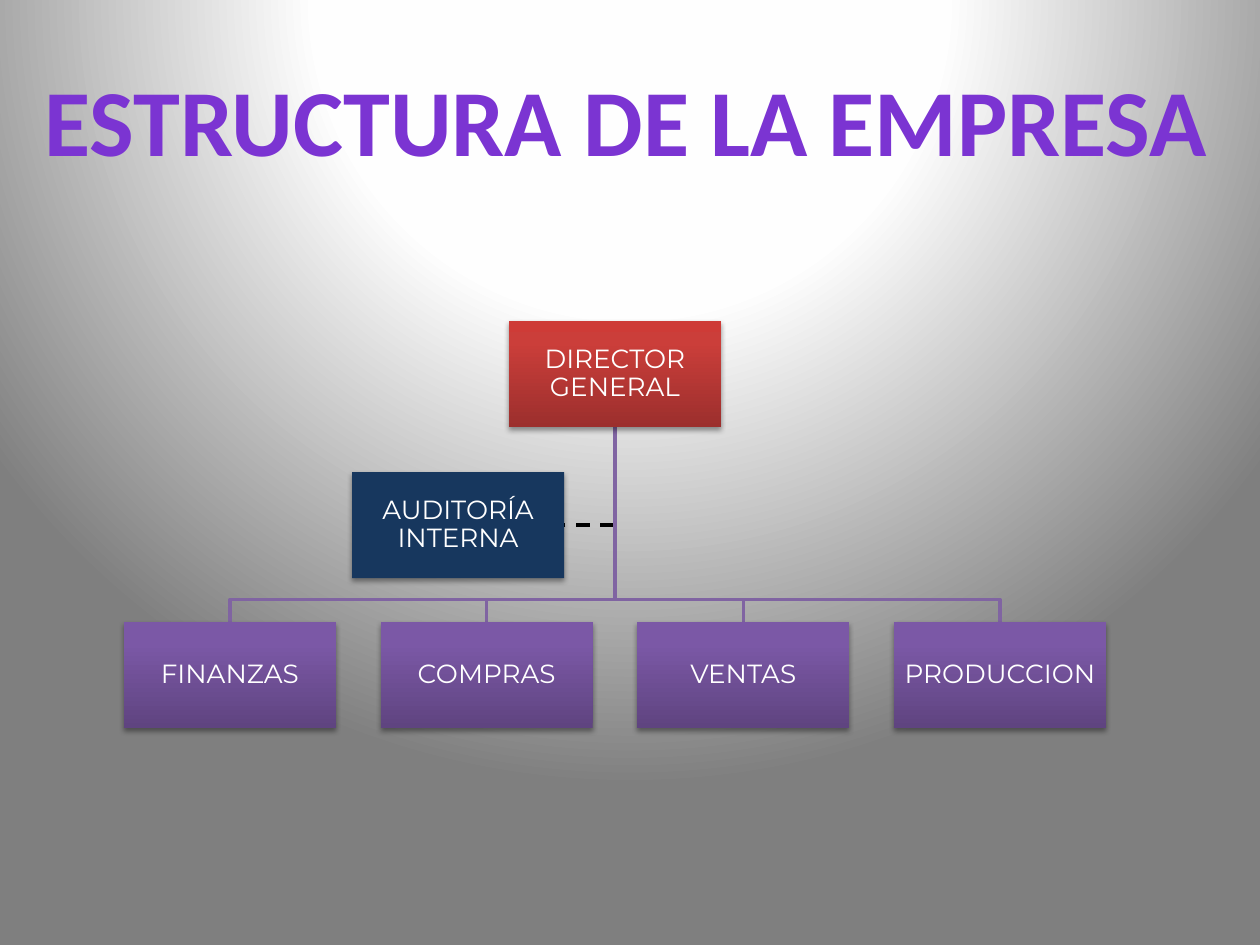
from lxml.etree import SubElement
from pptx import Presentation
from pptx.dml.color import RGBColor
from pptx.enum.dml import MSO_LINE
from pptx.enum.shapes import MSO_SHAPE
from pptx.enum.text import MSO_ANCHOR, MSO_AUTO_SIZE, PP_ALIGN
from pptx.oxml.ns import qn
from pptx.util import Pt

WHITE = RGBColor(0xFF, 0xFF, 0xFF)
BLACK = RGBColor(0, 0, 0)
NAVY = RGBColor(0x17, 0x37, 0x5E)
PURPLE_LINE = RGBColor(0x80, 0x64, 0xA2)
TITLE_PURPLE = RGBColor(0x7B, 0x34, 0xD2)
RED_STOPS = [
    (0, RGBColor(0x9C, 0x2F, 0x2D)),
    (80, RGBColor(0xCB, 0x3E, 0x3A)),
    (100, RGBColor(0xCE, 0x3B, 0x37)),
]
PURPLE_STOPS = [
    (0, RGBColor(0x5F, 0x44, 0x80)),
    (80, RGBColor(0x7B, 0x58, 0xA6)),
    (100, RGBColor(0x7C, 0x57, 0xA8)),
]
BACKGROUND_STOPS = [
    (0, WHITE),
    (40, RGBColor(0xFE, 0xFE, 0xFE)),
    (100, RGBColor(0x7F, 0x7F, 0x7F)),
]
DEPARTMENTS = ["FINANZAS", "COMPRAS", "VENTAS", "PRODUCCION"]
BOX_W, BOX_H = 121.2, 60.6


def add(parent, tag, **attrs):
    """Append a child element with the given attributes."""
    return SubElement(parent, qn(tag), {k: str(v) for k, v in attrs.items()})


def set_gradient(fill, element, stops):
    """Give a fill the listed stops and return its emptied gradient element."""
    fill.gradient()
    grad = element.find(".//" + qn("a:gradFill"))
    for child in list(grad):
        grad.remove(child)
    stop_list = add(grad, "a:gsLst")
    for position, color in stops:
        stop = add(stop_list, "a:gs", pos=position * 1000)
        add(stop, "a:srgbClr", val=color)
    return grad


def set_background(slide):
    """Light the slide from above with a circular gradient."""
    grad = set_gradient(slide.background.fill, slide.element, BACKGROUND_STOPS)
    path = add(grad, "a:path", path="circle")
    add(path, "a:fillToRect", l=50000, t=-80000, r=50000, b=180000)


def add_title(slide, left, top, width, height):
    """Place and format the title placeholder."""
    title = slide.shapes.title
    title.left, title.top, title.width, title.height = map(Pt, (left, top, width, height))
    tf = title.text_frame
    tf.text = "ESTRUCTURA DE LA EMPRESA"
    tf.word_wrap = False
    tf.auto_size = MSO_AUTO_SIZE.NONE
    tf.vertical_anchor = MSO_ANCHOR.TOP
    p = tf.paragraphs[0]
    p.alignment = PP_ALIGN.CENTER
    p.font.name, p.font.size, p.font.bold = "Calibri", Pt(54), True
    p.font.color.rgb = TITLE_PURPLE


def add_link(slide, points, color, dash=None):
    """Draw an open elbow line through the points."""
    start, *rest = [(Pt(x), Pt(y)) for x, y in points]
    builder = slide.shapes.build_freeform(*start)
    builder.add_line_segments(rest, close=False)
    sp = builder.convert_to_shape()
    sp.fill.background()
    sp.line.color.rgb = color
    sp.line.width = Pt(2)
    if dash:
        sp.line.dash_style = dash
    sp.shadow.inherit = False


def add_box(slide, left, top, text, color=None, stops=None):
    """Add one labelled box with a soft shadow."""
    sp = slide.shapes.add_shape(
        MSO_SHAPE.RECTANGLE, Pt(left), Pt(top), Pt(BOX_W), Pt(BOX_H))
    if stops:
        grad = set_gradient(sp.fill, sp.element, stops)
        add(grad, "a:lin", ang=270 * 60000, scaled=0)
    else:
        sp.fill.solid()
        sp.fill.fore_color.rgb = color
    sp.line.fill.background()
    sp.shadow.inherit = False
    effects = sp.element.spPr.find(qn("a:effectLst"))
    shadow = add(effects, "a:outerShdw", blurRad=Pt(3.1), dist=Pt(1.6),
                 dir=90 * 60000, rotWithShape=0)
    add(add(shadow, "a:srgbClr", val=BLACK), "a:alpha", val=38000)
    tf = sp.text_frame
    tf.text = text
    tf.word_wrap = True
    tf.vertical_anchor = MSO_ANCHOR.MIDDLE
    tf.margin_left = tf.margin_right = tf.margin_top = tf.margin_bottom = Pt(0.75)
    p = tf.paragraphs[0]
    p.alignment = PP_ALIGN.CENTER
    p.line_spacing = 0.9
    p.font.name, p.font.size = "Montserrat", Pt(15)
    p.font.color.rgb = WHITE


def add_org_chart(slide, left, top, width, height):
    """Lay out director, audit and departments inside the given box."""
    center = left + width / 2
    trunk_top = top + BOX_H
    row_top = top + height - BOX_H
    bus = row_top - 12.8
    audit_left, audit_top = center - 29 - BOX_W, (top + row_top) / 2 + 0.4
    audit_middle = audit_top + BOX_H / 2
    pitch = (width - BOX_W) / (len(DEPARTMENTS) - 1)
    lefts = [left + i * pitch for i in range(len(DEPARTMENTS))]

    add_link(slide, [(center, trunk_top), (center, audit_middle),
                     (audit_left + BOX_W, audit_middle)], BLACK, MSO_LINE.DASH)
    for x in reversed(lefts):
        middle = x + BOX_W / 2
        add_link(slide, [(center, trunk_top), (center, bus),
                         (middle, bus), (middle, row_top)], PURPLE_LINE)
    add_box(slide, center - BOX_W / 2, top, "DIRECTOR GENERAL", stops=RED_STOPS)
    for x, name in zip(lefts, DEPARTMENTS):
        add_box(slide, x, row_top, name, stops=PURPLE_STOPS)
    add_box(slide, audit_left, audit_top, "AUDITORÍA INTERNA", color=NAVY)


def main():
    """Build and save the slide."""
    prs = Presentation()
    prs.slide_width, prs.slide_height = Pt(720), Pt(540)
    slide = prs.slides.add_slide(prs.slide_layouts[5])
    set_background(slide)
    add_org_chart(slide, 70.8, 183.4, 561.2, 232.6)
    add_title(slide, 14.4, 31.7, 686.9, 72.7)
    prs.save("out.pptx")


if __name__ == "__main__":
    main()
